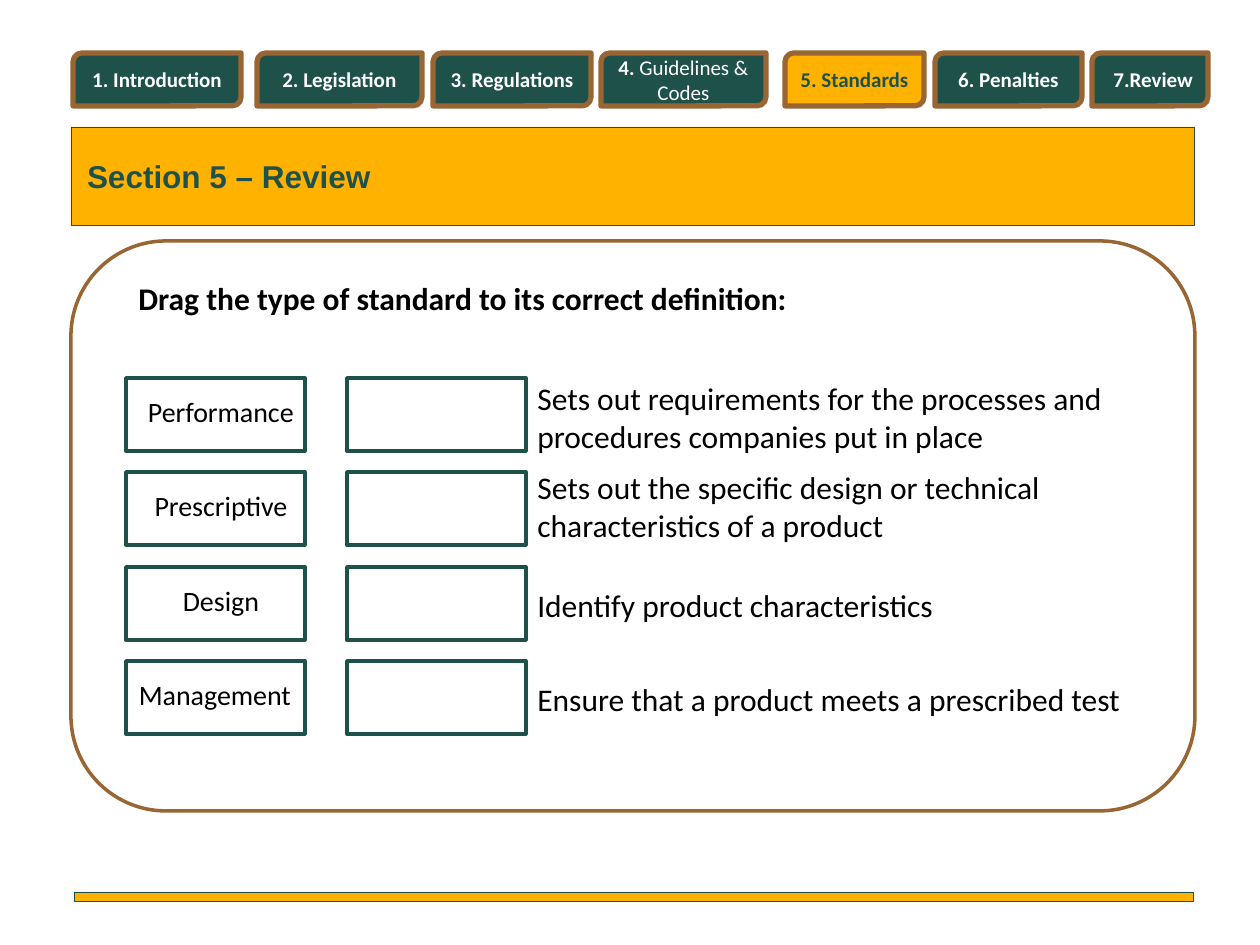
from pptx import Presentation
from pptx.dml.color import RGBColor
from pptx.enum.shapes import MSO_SHAPE as SHAPE
from pptx.enum.text import MSO_ANCHOR as ANCHOR, MSO_AUTO_SIZE as AUTO, PP_ALIGN as ALIGN
from pptx.util import Emu, Pt

GREEN = RGBColor(0x1F, 0x51, 0x4B)
GOLD = RGBColor(0xFF, 0xB3, 0x00)
BROWN = RGBColor(0x99, 0x65, 0x32)
WHITE = RGBColor(0xFF, 0xFF, 0xFF)
BLACK = RGBColor(0x00, 0x00, 0x00)
PX = 914400 / 126


def add_box(kind, left, top, width, height, fill, line, weight):
    box = page.shapes.add_shape(kind, *[Emu(round(n * PX)) for n in (left, top, width, height)])
    box.shadow.inherit = False
    if fill is None:
        box.fill.background()
    else:
        box.fill.solid()
        box.fill.fore_color.rgb = fill
    box.line.color.rgb = line
    box.line.width = Pt(weight)
    return box


def add_text(left, top, width, height, text, size, align=ALIGN.LEFT, bold=False):
    box = page.shapes.add_textbox(*[Emu(round(n * PX)) for n in (left, top, width, height)])
    box.text_frame.word_wrap = True
    box.text_frame.text = text
    para = box.text_frame.paragraphs[0]
    para.alignment = align
    font = para.runs[0].font
    font.name, font.size, font.bold = "Calibri", Pt(size), bold
    font.color.rgb = BLACK


deck = Presentation()
deck.slide_width, deck.slide_height = Emu(round(1260 * PX)), Emu(round(945 * PX))
page = deck.slides.add_slide(deck.slide_layouts[5])

# Section title bar
title = page.shapes.title
title.left, title.top, title.width, title.height = [Emu(round(n * PX)) for n in (71, 127, 1124, 98)]
title.fill.solid()
title.fill.fore_color.rgb = GOLD
title.line.color.rgb = GREEN
title.line.width = Pt(0.5)
frame = title.text_frame
frame.text = "Section 5 – Review"
frame.auto_size = AUTO.NONE
frame.vertical_anchor = ANCHOR.MIDDLE
frame.margin_left = Emu(round(16 * PX))
para = frame.paragraphs[0]
para.alignment = ALIGN.LEFT
font = para.runs[0].font
font.name, font.size, font.bold = "Arial", Pt(18), True
font.color.rgb = GREEN

# Content frame and footer bar
add_box(SHAPE.ROUNDED_RECTANGLE, 71, 241, 1124, 570, None, BROWN, 2)
add_box(SHAPE.RECTANGLE, 74, 892, 1120, 10, GOLD, GREEN, 0.5)

# Navigation tabs: left, width, bold part, plain part
tabs = [
    (73, 168, "1. Introduction", ""),
    (257, 165, "2. Legislation", ""),
    (433, 158, "3. Regulations", ""),
    (601, 165, "4. ", "Guidelines & Codes"),
    (785, 139, "5. Standards", ""),
    (935, 147, "6. Penalties", ""),
    (1092, 116, "7.Review", ""),
]
for left, width, strong, plain in tabs:
    current = strong.startswith("5")
    tab = add_box(SHAPE.ROUND_2_DIAG_RECTANGLE, left, 53, width, 53,
                  GOLD if current else GREEN, BROWN, 3)
    tab.text_frame.word_wrap = True
    tab.text_frame.vertical_anchor = ANCHOR.MIDDLE
    para = tab.text_frame.paragraphs[0]
    para.alignment = ALIGN.RIGHT if strong == "7.Review" else ALIGN.CENTER
    for text, bold in ((strong, True), (plain, False)):
        if text:
            span = para.add_run()
            span.text = text
            span.font.name, span.font.size, span.font.bold = "Calibri", Pt(12), bold
            span.font.color.rgb = GREEN if current else WHITE

# Instruction
add_text(126, 273, 1018, 50, "Drag the type of standard to its correct definition:", 18, bold=True)

# Matching rows: label, label left and width, definition, definition top and height
rows = [
    ("Performance", 116, 210,
     "Sets out requirements for the processes and procedures companies put in place", 373, 89),
    ("Prescriptive", 116, 210,
     "Sets out the specific design or technical characteristics of a product", 462, 89),
    ("Design", 116, 210, "Identify product characteristics", 580, 50),
    ("Management", 126, 178, "Ensure that a product meets a prescribed test", 674, 50),
]
for index, (label, left, width, definition, top, height) in enumerate(rows):
    row_top = 378 + index * 189 // 2
    for box_left in (126, 347):
        add_box(SHAPE.RECTANGLE, box_left, row_top, 179, 73, None, GREEN, 2)
    add_text(left, row_top + 10, width, 47, label, 16, ALIGN.CENTER)
    add_text(525, top, 683, height, definition, 18)

deck.save("out.pptx")
